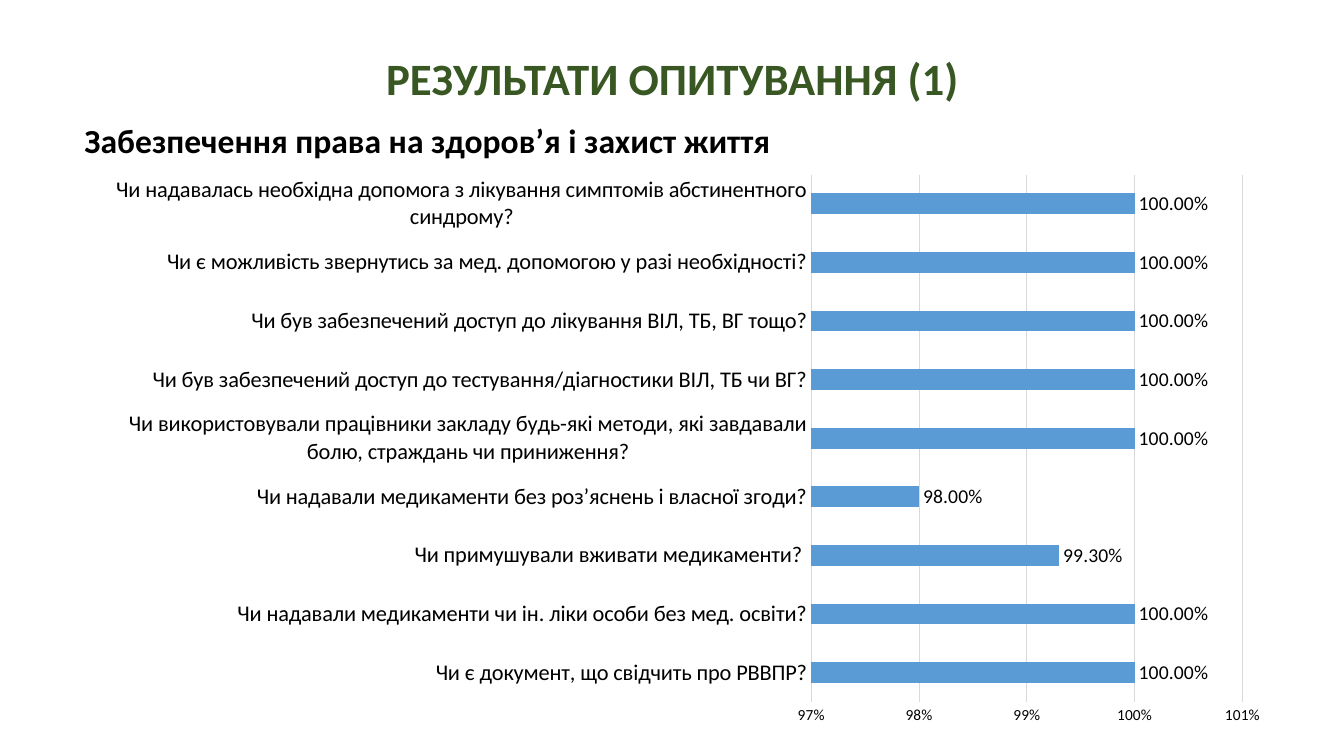
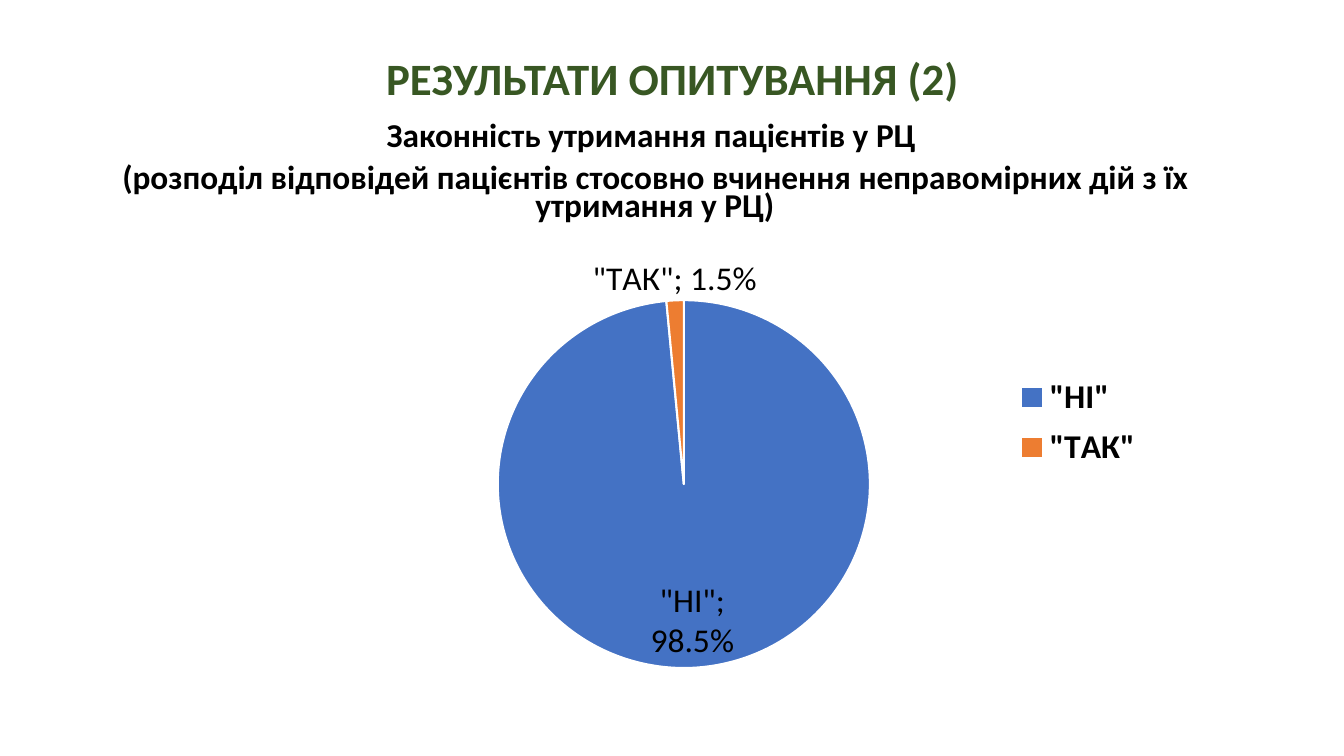
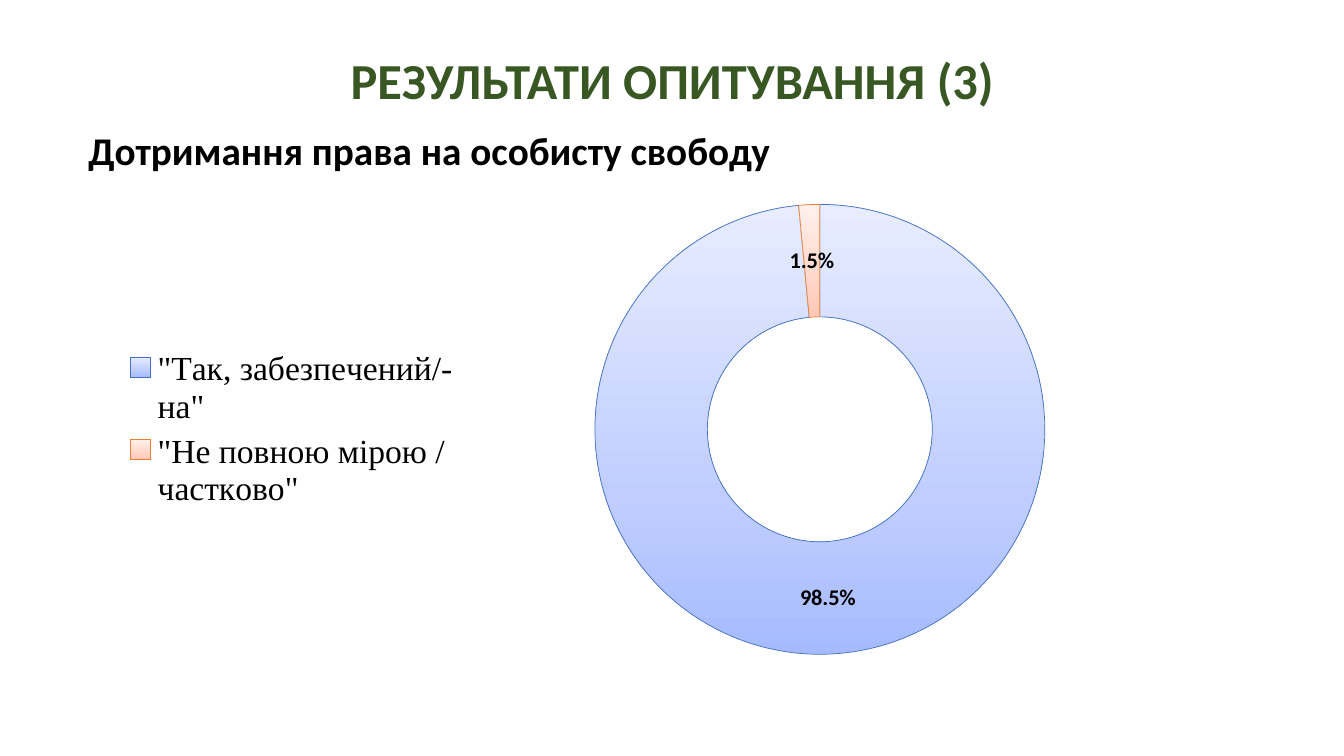
import copy
from dataclasses import dataclass

import pptx
import pptx.chart.data
import pptx.dml.color
import pptx.enum.chart
import pptx.enum.text
import pptx.oxml
import pptx.oxml.ns
import pptx.util

Cm = pptx.util.Cm
Pt = pptx.util.Pt
kinds = pptx.enum.chart.XL_CHART_TYPE
spots = pptx.enum.chart.XL_LABEL_POSITION
sides = pptx.enum.chart.XL_LEGEND_POSITION
ticks = pptx.enum.chart.XL_TICK_MARK
aligns = pptx.enum.text.PP_ALIGN


@dataclass(frozen=True)
class Theme:
    face: str = "Calibri"
    serif: str = "Times New Roman"
    green: str = "385723"
    black: str = "000000"
    white: str = "FFFFFF"
    gray: str = "D9D9D9"
    bar: str = "5B9BD5"
    slices: tuple = ("4472C4", "ED7D31")
    fades: tuple = (
        ((0, "A6BBFF"), (0.35, "C0CEFF"), (1, "E7ECFF")),
        ((0, "FFC7B6"), (0.35, "FFD7CB"), (1, "FFF0EB")),
    )
    head: float = 32
    big: float = 36
    text: float = 24
    axis: float = 16
    mark: float = 14
    scale: float = 11
    base: float = 10


theme = Theme()


def paint(code):
    return pptx.dml.color.RGBColor.from_string(code)


def style(font, size, color=theme.black, bold=False, face=theme.face):
    font.size = Pt(size)
    font.bold = bold
    font.name = face
    font.color.rgb = paint(color)


def rule(line, color, width):
    line.color.rgb = paint(color)
    line.width = Pt(width)


def place(box):
    return [Cm(side) for side in box]


def write(part, words, size, color, align, space):
    part.alignment = align
    part.line_spacing = space
    run = part.add_run()
    run.text = words
    style(run.font, size, color, True)


def add_page(deck, words, size=theme.head, height=2.03):
    page = deck.slides.add_slide(deck.slide_layouts[5])
    title = page.shapes.title
    title.left, title.top, title.width, title.height = place((2.34, 1.02, 29.21, height))
    frame = title.text_frame
    frame.word_wrap = True
    frame.auto_size = pptx.enum.text.MSO_AUTO_SIZE.NONE
    frame.vertical_anchor = pptx.enum.text.MSO_ANCHOR.MIDDLE
    write(frame.paragraphs[0], words, size, theme.green, aligns.CENTER, 0.9)
    return page


def add_lead(page, box, lines, size, align=aligns.LEFT, space=0.9):
    frame = page.shapes.add_textbox(*place(box)).text_frame
    frame.word_wrap = True
    for rank, words in enumerate(lines):
        part = frame.add_paragraph() if rank else frame.paragraphs[0]
        part.space_before = Pt(10)
        write(part, words, size, theme.black, align, space)


def add_chart(page, kind, box, rows):
    data = pptx.chart.data.CategoryChartData()
    data.categories = [name for name, _ in rows]
    data.add_series("Series 1", [value for _, value in rows])
    chart = page.shapes.add_chart(kind, *place(box), data).chart
    chart.has_title = False
    chart.has_legend = False
    style(chart.font, theme.base)
    return chart


def add_marks(chart, form, size, bold=False):
    marks = chart.plots[0].series[0].data_labels
    marks.show_value = True
    marks.number_format = form
    marks.number_format_is_linked = False
    style(marks.font, size, bold=bold)
    return marks


def add_key(chart, side, bold=False, face=theme.face):
    chart.has_legend = True
    chart.legend.position = side
    chart.legend.include_in_layout = False
    style(chart.legend.font, theme.text, bold=bold, face=face)


def new_tag(name, value=None):
    tag = pptx.oxml.parse_xml(f"<c:{name} {pptx.oxml.ns.nsdecls('c')}/>")
    if value is not None:
        tag.set("val", str(value))
    return tag


def set_frame(node, index, box, inner=False):
    for old in node.xpath("./c:layout"):
        node.remove(old)
    frame = new_tag("layout")
    hand = new_tag("manualLayout")
    frame.append(hand)
    if inner:
        hand.append(new_tag("layoutTarget", "inner"))
    for name in ("xMode", "yMode"):
        hand.append(new_tag(name, "edge"))
    for name, value in zip("xywh", box):
        hand.append(new_tag(name, value))
    node.insert(index, frame)


def set_plot(chart, box):
    set_frame(chart._chartSpace.xpath(".//c:plotArea")[0], 0, box, True)


def split_mark(marks, index, spot):
    node = marks._element
    single = new_tag("dLbl")
    single.append(new_tag("idx", index))
    for child in node:
        if not child.tag.endswith("showLeaderLines"):
            single.append(copy.deepcopy(child))
    single.xpath("./c:dLblPos")[0].set("val", spot)
    node.insert(0, single)


def fade(series, index, stops):
    fill = series.points[index].format.fill
    fill.gradient()
    fill.gradient_angle = 90
    nodes = series._element.xpath(".//a:gsLst")[index]
    nodes.insert(1, copy.deepcopy(nodes[0]))
    for stop, (place_at, color) in zip(fill.gradient_stops, stops):
        stop.position = place_at
        stop.color.rgb = paint(color)


def add_bars(page, box, rows):
    chart = add_chart(page, kinds.BAR_CLUSTERED, box, rows)
    set_plot(chart, (0.6, 0.02, 0.36, 0.92))
    plot = chart.plots[0]
    plot.gap_width = 182
    plot.vary_by_categories = False
    fill = plot.series[0].format.fill
    fill.solid()
    fill.fore_color.rgb = paint(theme.bar)
    add_marks(chart, "0.00%", theme.mark).position = spots.OUTSIDE_END
    names, scale = chart.category_axis, chart.value_axis
    for axis, size in ((names, theme.axis), (scale, theme.scale)):
        axis.major_tick_mark = axis.minor_tick_mark = ticks.NONE
        style(axis.tick_labels.font, size)
    names.has_major_gridlines = False
    rule(names.format.line, theme.gray, 0.75)
    scale.minimum_scale, scale.maximum_scale, scale.major_unit = 0.97, 1.01, 0.01
    scale.tick_labels.number_format = "0%"
    scale.tick_labels.number_format_is_linked = False
    scale.format.line.fill.background()
    scale.has_major_gridlines = True
    rule(scale.major_gridlines.format.line, theme.gray, 0.75)


def add_pie(page, box, rows):
    chart = add_chart(page, kinds.PIE, box, rows)
    set_plot(chart, (0.3, 0.09, 0.35, 0.81))
    for index, color in enumerate(theme.slices):
        form = chart.plots[0].series[0].points[index].format
        form.fill.solid()
        form.fill.fore_color.rgb = paint(color)
        rule(form.line, theme.white, 1.5)
    marks = add_marks(chart, "0.0%", theme.text)
    marks.show_category_name = True
    marks.position = spots.OUTSIDE_END
    gap = new_tag("separator")
    gap.text = "; "
    marks._element.xpath("./c:showBubbleSize|./c:showPercent")[-1].addnext(gap)
    split_mark(marks, 0, "inEnd")
    add_key(chart, sides.BOTTOM, bold=True)
    set_frame(chart.legend._element, 1, (0.77, 0.24, 0.14, 0.24))


def add_ring(page, box, rows):
    chart = add_chart(page, kinds.DOUGHNUT, box, rows)
    series = chart.plots[0].series[0]
    for index, (color, stops) in enumerate(zip(theme.slices, theme.fades)):
        fade(series, index, stops)
        rule(series.points[index].format.line, color, 0.5)
    add_marks(chart, "0.0%", theme.axis, bold=True)
    add_key(chart, sides.LEFT, face=theme.serif)


def main():
    deck = pptx.Presentation()
    deck.slide_width, deck.slide_height = place((33.87, 19.05))

    page = add_page(deck, "РЕЗУЛЬТАТИ ОПИТУВАННЯ (1)")
    add_lead(page, (1.88, 3.02, 30.1, 1.35),
             ["Забезпечення права на здоров’я і захист життя"], theme.text)
    add_bars(page, (2.34, 4.11, 30.18, 14.45), [
        ("Чи є документ, що свідчить про РВВПР?", 1),
        ("Чи надавали медикаменти чи ін. ліки особи без мед. освіти?", 1),
        ("Чи примушували вживати медикаменти? ", 0.993),
        ("Чи надавали медикаменти без роз’яснень і власної згоди?", 0.98),
        ("Чи використовували працівники закладу будь-які методи, "
         "які завдавали болю, страждань чи приниження?", 1),
        ("Чи був забезпечений доступ до тестування/діагностики ВІЛ, ТБ чи ВГ?", 1),
        ("Чи був забезпечений доступ до лікування ВІЛ, ТБ, ВГ тощо?", 1),
        ("Чи є можливість звернутись за мед. допомогою у разі необхідності?", 1),
        ("Чи надавалась необхідна допомога з лікування симптомів "
         "абстинентного синдрому?", 1),
    ])

    page = add_page(deck, "РЕЗУЛЬТАТИ ОПИТУВАННЯ (2)")
    add_lead(page, (1.9, 3.02, 29.21, 2.79), [
        "Законність утримання пацієнтів у РЦ ",
        "(розподіл відповідей пацієнтів стосовно вчинення "
        "неправомірних дій з їх утримання у РЦ)",
    ], 23.8, aligns.CENTER, 0.7)
    add_pie(page, (4.29, 6.4, 27.25, 11.58), [('"НІ"', 0.985), ('"ТАК"', 0.015)])

    page = add_page(deck, "РЕЗУЛЬТАТИ ОПИТУВАННЯ (3)", theme.big, 2.16)
    add_lead(page, (1.98, 3.18, 29.21, 1.63),
             ["Дотримання права на особисту свободу"], 28)
    add_ring(page, (2.79, 4.8, 26.85, 12.04), [
        ('"Так, забезпечений/-на"', 0.985),
        ('"Не повною мірою / частково"', 0.015),
    ])

    deck.save("out.pptx")


if __name__ == "__main__":
    main()
